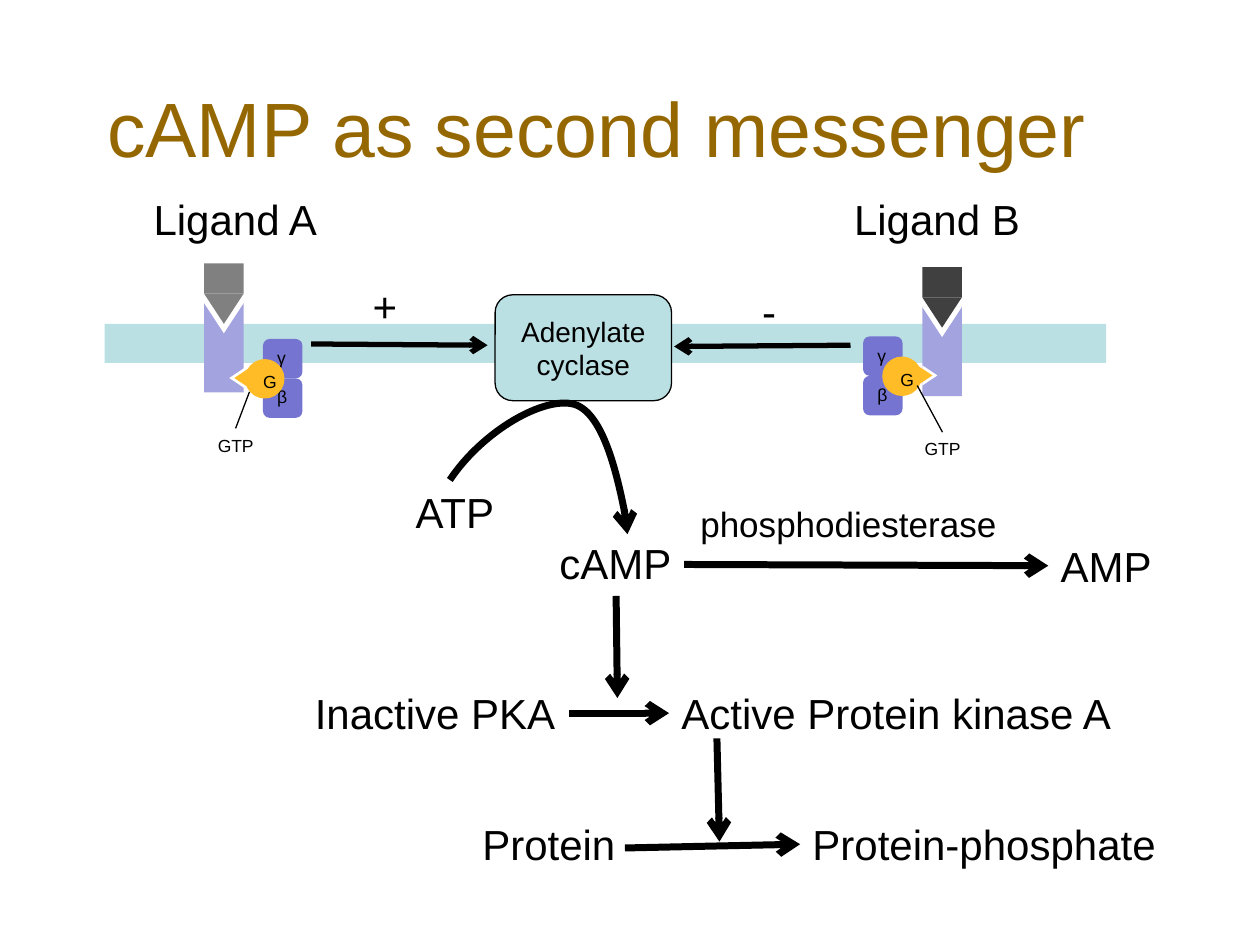
from collections import namedtuple
from dataclasses import dataclass

from lxml import etree
from pptx import Presentation
from pptx import util as u
from pptx.dml.color import RGBColor
from pptx.enum import shapes, text
from pptx.oxml.ns import qn

SHAPE = shapes.MSO_SHAPE
COLUMNS, ROWS = 100, 75
SLIDE_W, SLIDE_H = u.Inches(10), u.Inches(7.5)


@dataclass(frozen=True)
class Theme:
    font: str = "Arial"
    title: str = "956700"
    ink: str = "000000"
    paper: str = "FFFFFF"
    membrane: str = "BBE0E3"
    receptor: str = "A3A3E0"
    subunit: str = "7575D1"
    g_protein: str = "FFBC26"
    ligand_a: str = "808080"
    ligand_b: str = "404040"
    title_pt: int = 44
    label_pt: int = 24
    enzyme_pt: int = 20
    box_pt: int = 16
    small_pt: int = 10
    thin: float = 0.75
    signal: float = 3
    reaction: float = 4


THEME = Theme()


class Box(namedtuple("Box", "x y w h")):
    """A region in grid columns and rows."""

    def inner(self, x, y, w, h):
        return Box(self.x + x, self.y + y, w, h)

    def point(self, x, y):
        return col(self.x + x), row(self.y + y)

    def emu(self):
        return col(self.x), row(self.y), col(self.w), row(self.h)


def col(n):
    return round(SLIDE_W * n / COLUMNS)


def row(n):
    return round(SLIDE_H * n / ROWS)


def rgb(value):
    return RGBColor.from_string(value)


def write(sp, words, size, color=THEME.ink, align=text.PP_ALIGN.LEFT,
          anchor=text.MSO_ANCHOR.TOP, wrap=True):
    tf = sp.text_frame
    tf.text = words
    tf.word_wrap = wrap
    tf.vertical_anchor = anchor
    p = tf.paragraphs[0]
    p.alignment = align
    font = p.runs[0].font
    font.name, font.size, font.color.rgb = THEME.font, u.Pt(size), rgb(color)


def add_label(parent, box, words, size=THEME.label_pt, wrap=False):
    write(parent.add_textbox(*box.emu()), words, size, wrap=wrap)


def add_solid(parent, kind, box, fill, rotation=0):
    sp = parent.add_shape(kind, *box.emu())
    sp.shadow.inherit = False
    sp.fill.solid()
    sp.fill.fore_color.rgb = rgb(fill)
    sp.line.fill.background()
    sp.rotation = rotation
    return sp


def style_line(sp, width, arrow):
    sp.line.color.rgb = rgb(THEME.ink)
    sp.line.width = u.Pt(width)
    if arrow:
        outline = sp._element.spPr.find(qn("a:ln"))
        etree.SubElement(outline, qn("a:tailEnd"), type="arrow")


def add_line(parent, box, start, end, width, arrow=True):
    line = parent.add_connector(shapes.MSO_CONNECTOR.STRAIGHT,
                                *box.point(*start), *box.point(*end))
    style_line(line, width, arrow)
    etree.SubElement(line._element.spPr, qn("a:effectLst"))


def add_curve(parent, box, start, controls):
    """Draw cubic curves; each takes three consecutive control points."""
    builder = parent.build_freeform(*box.point(*start), scale=1.0)
    builder.add_line_segments([box.point(*c) for c in controls], close=False)
    sp = builder.convert_to_shape()
    sp.shadow.inherit = False
    sp.fill.background()
    style_line(sp, THEME.reaction, True)
    segments = list(sp._element.iter(qn("a:lnTo")))
    for i in range(0, len(segments), 3):
        cubic = etree.Element(qn("a:cubicBezTo"))
        segments[i].addprevious(cubic)
        for segment in segments[i:i + 3]:
            cubic.append(segment[0])
            segment.getparent().remove(segment)


def add_title(slide, box, words):
    title = slide.shapes.title
    title.left, title.top, title.width, title.height = box.emu()
    write(title, words, THEME.title_pt, THEME.title, anchor=text.MSO_ANCHOR.BOTTOM)
    title.text_frame.auto_size = text.MSO_AUTO_SIZE.NONE


def add_receptor(group, box, ligand):
    """Receptor with a V-shaped pocket and its ligand above."""
    w, tip = box.w, 2.4
    add_solid(group, SHAPE.RECTANGLE, box.inner(0, 3.15, w, 7.1), THEME.receptor)
    add_solid(group, SHAPE.ISOSCELES_TRIANGLE, box.inner(0, 3.15, w, tip), THEME.paper, 180)
    add_solid(group, SHAPE.RECTANGLE, box.inner(0, 0, w, tip), ligand)
    add_solid(group, SHAPE.ISOSCELES_TRIANGLE, box.inner(0, tip, w, tip), ligand, 180)


def add_g_protein(group, box, mirrored):
    """Subunits and G, whose tip points left unless mirrored."""
    def place(x, y, w, h):
        return box.inner(box.w - x - w if mirrored else x, y, w, h)

    unit = box.h / 2
    turn = 90 if mirrored else 270
    add_solid(group, SHAPE.ISOSCELES_TRIANGLE, place(0, 2.5, 1.6, 1.2), THEME.paper, turn)
    for i, name in enumerate("γβ"):
        sp = add_solid(group, SHAPE.ROUNDED_RECTANGLE,
                       place(box.w - unit, i * unit, unit, unit), THEME.subunit)
        write(sp, name, THEME.small_pt)
    add_solid(group, SHAPE.ISOSCELES_TRIANGLE, place(0.4, 2.5, 1.6, 1.2), THEME.g_protein, turn)
    sp = add_solid(group, SHAPE.OVAL, place(1.45, 1.6, unit, unit), THEME.g_protein)
    write(sp, "G", THEME.small_pt)


def add_membrane(slide, box):
    parent = slide.shapes
    add_solid(parent, SHAPE.RECTANGLE, box.inner(0, 10.8, box.w, 3.1), THEME.membrane)

    complexes = (
        (box.inner(7.9, 6, 3.14, 10.3), THEME.ligand_a, box.inner(9.7, 12, 6, 6.26), False),
        (box.inner(64.9, 6.3, 3.14, 10.3), THEME.ligand_b, box.inner(60.2, 11.8, 6.1, 6.26), True),
    )
    for receptor, ligand, g_protein, mirrored in complexes:
        group = parent.add_group_shape().shapes
        add_receptor(group, receptor, ligand)
        add_g_protein(group, g_protein, mirrored)

    cyclase = add_solid(parent, SHAPE.ROUNDED_RECTANGLE,
                        box.inner(31, 8.5, 14, 8.4), THEME.membrane)
    style_line(cyclase, THEME.thin, False)
    write(cyclase, "Adenylate cyclase", THEME.box_pt, align=text.PP_ALIGN.CENTER,
          anchor=text.MSO_ANCHOR.MIDDLE)

    add_line(parent, box, (16.4, 12.4), (30.4, 12.5), THEME.signal)
    add_line(parent, box, (59.2, 12.5), (45.2, 12.6), THEME.signal)
    add_label(parent, box.inner(20.3, 6.9, 4, 5), "+")
    add_label(parent, box.inner(51.2, 7.3, 4.5, 5), "-", wrap=True)
    add_label(parent, box.inner(2.9, 0, 15.1, 5), "Ligand A")
    add_label(parent, box.inner(58.5, 0, 15.3, 5), "Ligand B")

    for x, y, start, end in ((8, 19.1, (10.4, 19.1), (11.5, 16.2)),
                             (64.1, 19.4, (66.5, 19.4), (64.5, 15.7))):
        add_label(parent, box.inner(x, y, 4.9, 2.7), "GTP", THEME.small_pt)
        add_line(parent, box, start, end, THEME.thin, arrow=False)


def add_pathway(slide, box):
    parent = slide.shapes
    for words, x, y, w in (
            ("ATP", 8, 6.1, 8.4), ("cAMP", 19.4, 10.2, 10.9), ("AMP", 59.2, 10.4, 9.4),
            ("Inactive PKA", 0, 22.1, 21.2), ("Active Protein kinase A", 29.1, 22.1, 36.5),
            ("Protein", 13.3, 32.5, 12.7), ("Protein-phosphate", 39.5, 32.5, 29.3)):
        add_label(parent, box.inner(x, y, w, 5), words)
    add_label(parent, box.inner(30.6, 7.4, 25.7, 4.4), "phosphodiesterase", THEME.enzyme_pt)

    add_curve(parent, box, (11.7, 6.1), ((14.3, 2.2), (19.2, -0.6), (21.6, 0.1),
                                         (23.9, 0.8), (25.9, 9.1), (25.8, 10.4)))
    for start, end in (((30.3, 12.8), (59.2, 12.9)), ((21.2, 24.6), (29.1, 24.6)),
                       ((25.6, 35.3), (39.5, 35)), ((24.9, 15.3), (25, 23.4)),
                       ((32.9, 26.6), (33.1, 34.8))):
        add_line(parent, box, start, end, THEME.reaction)


def main():
    prs = Presentation()
    prs.slide_width, prs.slide_height = SLIDE_W, SLIDE_H
    slide = prs.slides.add_slide(prs.slide_layouts[5])
    add_title(slide, Box(7.5, 4.2, 85, 10), "cAMP as second messenger")
    add_membrane(slide, Box(8.3, 14.9, 79.5, 22))
    add_pathway(slide, Box(24, 32, 69, 38))
    prs.save("out.pptx")


if __name__ == "__main__":
    main()
